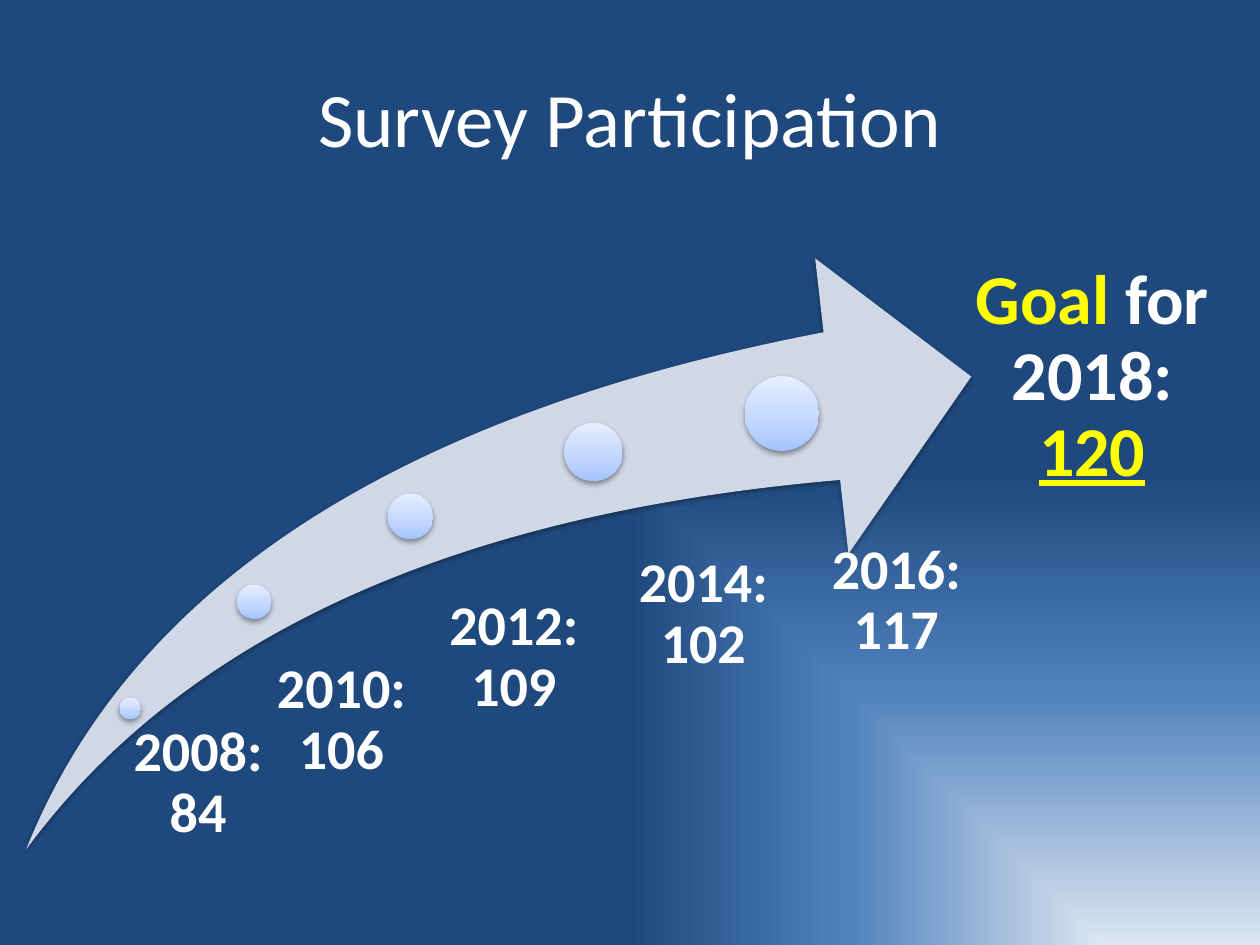
"""Build the survey participation slide with its rising arrow."""
from pptx import Presentation
from pptx.dml.color import RGBColor as RGB
from pptx.enum.shapes import MSO_SHAPE as Geom
from pptx.enum.text import MSO_ANCHOR as Anchor, PP_ALIGN as Align
from pptx.oxml import parse_xml
from pptx.oxml.ns import nsdecls
from pptx.util import Cm, Pt

WHITE = RGB(0xFF, 0xFF, 0xFF)
YELLOW = RGB(0xFF, 0xFF, 0x00)
MIST = RGB(0xD0, 0xD8, 0xE8)
NIGHT = [(0, RGB(0xDC, 0xE6, 0xF2)), (54, RGB(0x4F, 0x81, 0xBD)), (100, RGB(0x1F, 0x49, 0x7D))]
SKY = [(0, RGB(0xA4, 0xC4, 0xFF)), (35, RGB(0xBF, 0xD4, 0xFF)), (100, RGB(0xE6, 0xEE, 0xFF))]
UPWARD = '<a:lin ang="16200000" scaled="0"/>'
CORNER = '<a:path path="rect"><a:fillToRect l="100000" t="100000"/></a:path>'

SURVEYS = [
    ("2008: 84", (2.41, 14.07, 0.43), (2.24, 14.58, 3.28, 2.26), 0.23),
    ("2010: 106", (4.78, 11.79, 0.69), (5.13, 13.31, 3.15, 2.59), 0.36),
    ("2012: 109", (7.82, 9.96, 0.91), (8.28, 12.04, 3.68, 3.48), 0.48),
    ("2014: 102", (11.38, 8.53, 1.17), (11.96, 11.18, 3.81, 3.91), 0.63),
    ("2016: 117", (15.01, 7.59, 1.5), (15.77, 10.9, 3.81, 3.68), 0.79),
]


def apply(item, values):
    for name, value in values.items():
        setattr(item, name, value)


class Painter:
    def __init__(self, slide, font):
        self.slide = slide
        self.font = font

    def blend(self, owner, fill, stops, course):
        fill.gradient()
        marks = "".join(
            f'<a:gs pos="{spot * 1000}"><a:srgbClr val="{tone}"/></a:gs>' for spot, tone in stops
        )
        old = owner.element.xpath(".//a:gradFill")[0]
        new = parse_xml(
            f'<a:gradFill {nsdecls("a")} rotWithShape="1">'
            f"<a:gsLst>{marks}</a:gsLst>{course}</a:gradFill>"
        )
        old.getparent().replace(old, new)

    def backdrop(self, stops):
        self.blend(self.slide, self.slide.background.fill, stops, CORNER)

    def shape(self, kind, box):
        shape = self.slide.shapes.add_shape(kind, *map(Cm, box))
        shape.line.fill.background()
        shape.shadow.inherit = False
        shape.element.xpath(".//a:effectLst")[0].append(parse_xml(
            f'<a:outerShdw {nsdecls("a")} blurRad="40000" dist="20000" dir="5400000" '
            'rotWithShape="0"><a:srgbClr val="000000"><a:alpha val="38000"/></a:srgbClr>'
            "</a:outerShdw>"
        ))
        return shape

    def arrow(self, box, color):
        shape = self.shape(Geom.SWOOSH_ARROW, box)
        shape.adjustments[0] = shape.adjustments[1] = 0.25
        shape.fill.solid()
        shape.fill.fore_color.rgb = color

    def dot(self, left, top, size):
        shape = self.shape(Geom.OVAL, (left, top, size, size))
        self.blend(shape, shape.fill, SKY, UPWARD)

    def text(self, box, runs, size, frame, bold=True, spacing=0.9):
        body = self.slide.shapes.add_textbox(*map(Cm, box)).text_frame
        apply(body, {"word_wrap": True, **frame})
        para = body.paragraphs[0]
        apply(para, {"alignment": Align.CENTER, "line_spacing": spacing})
        for words, color, line in runs:
            run = para.add_run()
            run.text = words
            apply(run.font, {"name": self.font, "size": Pt(size), "bold": bold, "underline": line})
            run.font.color.rgb = color

    def label(self, box, runs, size, inset):
        edges = {"margin_left": Cm(inset), "margin_top": 0, "margin_right": 0, "margin_bottom": 0}
        self.text(box, runs, size, edges)


def main():
    deck = Presentation()
    apply(deck, {"slide_width": Cm(25.4), "slide_height": Cm(19.05)})
    page = Painter(deck.slides.add_slide(deck.slide_layouts[6]), "Calibri")
    page.backdrop(NIGHT)
    page.text((1.27, 0.76, 22.86, 3.18), [("Survey Participation", WHITE, None)], 44,
              {"vertical_anchor": Anchor.MIDDLE}, bold=False, spacing=1.0)
    page.arrow((0.53, 5.21, 19.05, 11.91), MIST)
    for words, spot, box, inset in SURVEYS:
        page.dot(*spot)
        page.label(box, [(words, WHITE, None)], 32, inset)
    goal = [("Goal", YELLOW, None), (" for 2018: ", WHITE, None), ("120", YELLOW, True)]
    page.label((19.3, 5.33, 5.21, 2.26), goal, 40, 0.23)
    deck.save("out.pptx")


if __name__ == "__main__":
    main()
